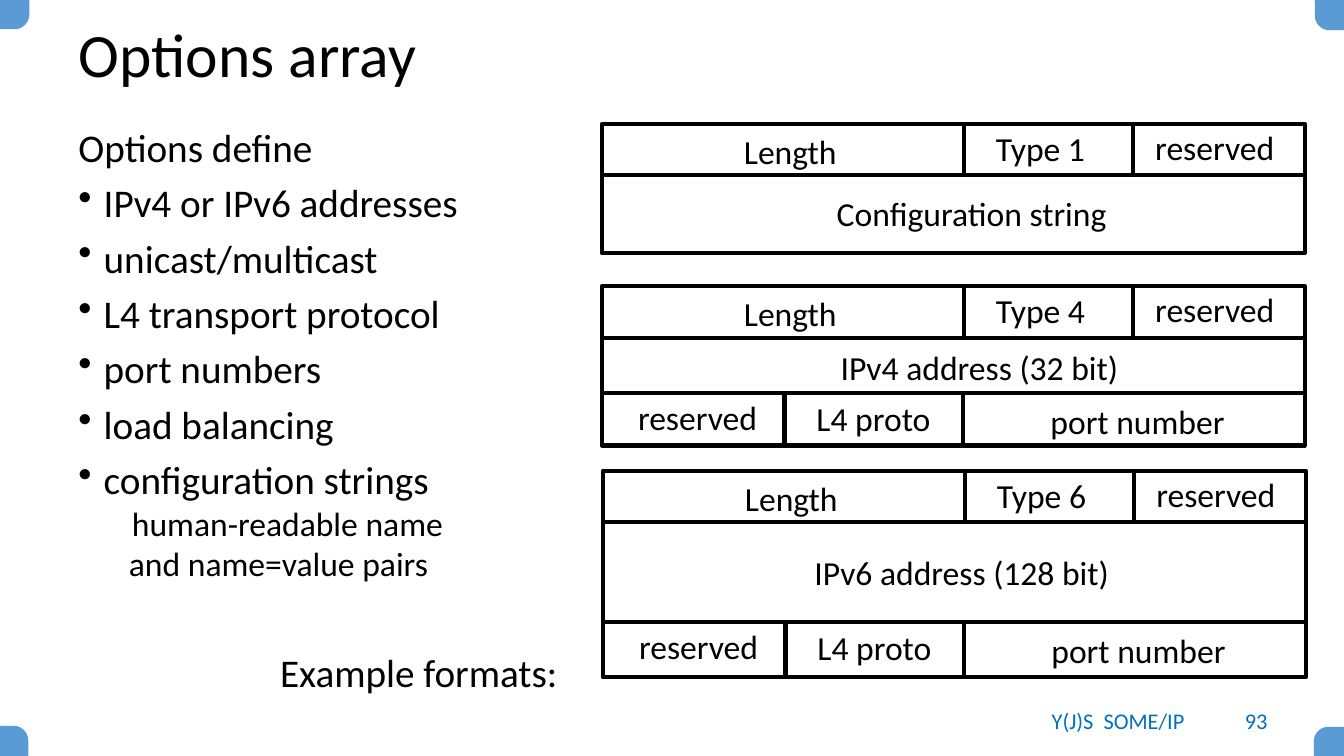
"""Build the slide on the options array and its three example formats."""
from dataclasses import dataclass

import lxml.etree
import pptx
import pptx.dml.color
import pptx.enum.shapes
import pptx.enum.text
import pptx.oxml.ns
import pptx.util

PX = 9144
FONT = "Calibri"
COLORS = {"text": "000000", "corner": "5B9BD5", "footer": "0070C0"}
ALIGN = pptx.enum.text.PP_ALIGN
ANCHOR = pptx.enum.text.MSO_ANCHOR
SHAPE = pptx.enum.shapes.MSO_SHAPE

FORMAT_WIDTH = 697
HEADER_HEIGHT = 51
HEADER_DIVIDERS = (359, 527)
PORT_DIVIDERS = (181, 358)
LABEL_HEIGHT = 50


@dataclass(frozen=True)
class Label:
    text: str
    left: int
    top: int
    width: int


@dataclass(frozen=True)
class OptionFormat:
    left: int
    top: int
    height: int
    type_name: str
    content: Label
    port_row: int | None = None


@dataclass(frozen=True)
class Line:
    text: str
    size: int = 28
    before: int = 6
    indent: int = 0
    bullet: bool = False


@dataclass(frozen=True)
class Corner:
    left: int
    top: int
    rotation: int


CORNERS = (
    Corner(-1, -1, 90),
    Corner(1304, -1, 180),
    Corner(1304, 720, 270),
    Corner(-1, 720, 0),
)
TOPICS = (
    "IPv4 or IPv6 addresses",
    "unicast/multicast",
    "L4 transport protocol",
    "port numbers",
    "load balancing",
    "configuration strings",
)
BODY = (
    Line("Options define"),
    *(Line(topic, indent=25, bullet=True) for topic in TOPICS),
    Line("human-readable name", size=24, before=0, indent=53),
    Line("and name=value pairs", size=24, before=0, indent=50),
    Line("Example formats:", before=46, indent=200),
)
FORMATS = (
    OptionFormat(597, 123, 128, "Type 1", Label("Configuration string", 223, 63, 329)),
    OptionFormat(597, 284, 158, "Type 4", Label("IPv4 address (32 bit)", 227, 55, 324), 106),
    OptionFormat(598, 467, 205, "Type 6", Label("IPv6 address (128 bit)", 200, 76, 314), 150),
)


def px(*lengths: int) -> list[int]:
    """Turn pixel lengths into EMU."""
    return [length * PX for length in lengths]


def rgb(name: str) -> pptx.dml.color.RGBColor:
    """Look up a named colour."""
    return pptx.dml.color.RGBColor.from_string(COLORS[name])


def format_runs(paragraph, size: int, color: str = "text") -> None:
    """Apply font, size and colour to every run of a paragraph."""
    for run in paragraph.runs:
        run.font.name = FONT
        run.font.size = pptx.util.Pt(size)
        run.font.color.rgb = rgb(color)


def add_text(shapes, label: Label, height: int, size: int, color: str = "text"):
    """Add a one-line text box and return its frame."""
    frame = shapes.add_textbox(*px(label.left, label.top, label.width, height)).text_frame
    frame.word_wrap = True
    frame.text = label.text
    format_runs(frame.paragraphs[0], size, color)
    return frame


def add_rule(shapes, x1: int, y1: int, x2: int, y2: int) -> None:
    """Draw one straight black rule."""
    straight = pptx.enum.shapes.MSO_CONNECTOR.STRAIGHT
    rule = shapes.add_connector(straight, *px(x1, y1, x2, y2))
    rule.line.color.rgb = rgb("text")
    rule.line.width = pptx.util.Pt(3)
    lxml.etree.SubElement(rule._element.spPr, pptx.oxml.ns.qn("a:effectLst"))


def add_format(slide, option: OptionFormat) -> None:
    """Draw one option format as a group of frame, rules and labels."""
    shapes = slide.shapes.add_group_shape().shapes
    left, top = option.left, option.top
    frame = shapes.add_shape(SHAPE.RECTANGLE, *px(left, top, FORMAT_WIDTH, option.height))
    frame.shadow.inherit = False
    frame.fill.background()
    frame.line.color.rgb = rgb("text")
    frame.line.width = pptx.util.Pt(3)

    labels = [
        Label("Length", 131, 2, 141),
        Label(option.type_name, 381, -1, 114),
        Label("reserved", 539, -2, 147),
        option.content,
    ]
    rows = [(HEADER_HEIGHT, 0, HEADER_HEIGHT, HEADER_DIVIDERS)]
    if option.port_row is not None:
        row = option.port_row
        rows.append((row, row, option.height, PORT_DIVIDERS))
        labels += [
            Label("reserved", 26, row - 1, 144),
            Label("L4 proto", 203, row, 144),
            Label("port number", 435, row + 3, 223),
        ]
    for rule, start, end, dividers in rows:
        add_rule(shapes, left, top + rule, left + FORMAT_WIDTH, top + rule)
        for divider in dividers:
            add_rule(shapes, left + divider, top + start, left + divider, top + end)
    for label in labels:
        placed = Label(label.text, left + label.left, top + label.top, label.width)
        text = add_text(shapes, placed, LABEL_HEIGHT, 24)
        text.auto_size = pptx.enum.text.MSO_AUTO_SIZE.SHAPE_TO_FIT_TEXT


def add_corner(slide, corner: Corner) -> None:
    """Draw one corner ornament."""
    ornament = slide.shapes.add_shape(
        SHAPE.ROUND_1_RECTANGLE, *px(corner.left, corner.top, 29, 31)
    )
    ornament.adjustments[0] = 0.5
    ornament.rotation = corner.rotation
    ornament.shadow.inherit = False
    ornament.fill.solid()
    ornament.fill.fore_color.rgb = rgb("corner")
    ornament.line.fill.background()


def add_title(slide) -> None:
    """Place and format the title."""
    title = slide.shapes.title
    title.left, title.top, title.width, title.height = px(68, 21, 1198, 72)
    title.text_frame.text = "Options array"
    title.text_frame.vertical_anchor = ANCHOR.MIDDLE
    heading = title.text_frame.paragraphs[0]
    heading.alignment = ALIGN.LEFT
    heading.line_spacing = 0.9
    format_runs(heading, 44)


def add_body(slide) -> None:
    """Write the list of what options define."""
    frame = slide.shapes.add_textbox(*px(68, 117, 1198, 566)).text_frame
    frame.word_wrap = True
    frame.text = "\n".join(line.text for line in BODY)
    for paragraph, line in zip(frame.paragraphs, BODY):
        paragraph.space_before = pptx.util.Pt(line.before)
        format_runs(paragraph, line.size)
        properties = paragraph._p.get_or_add_pPr()
        properties.set("marL", str(line.indent * PX))
        if line.bullet:
            properties.set("indent", str(-line.indent * PX))
            bullet = lxml.etree.SubElement(properties, pptx.oxml.ns.qn("a:buChar"))
            bullet.set("char", "•")


def main() -> None:
    """Build and save the slide."""
    deck = pptx.Presentation()
    deck.slide_width, deck.slide_height = px(1333, 750)
    slide = deck.slides.add_slide(deck.slide_layouts.get_by_name("Title Only"))
    for corner in CORNERS:
        add_corner(slide, corner)
    add_title(slide)
    for label, alignment in (
        (Label("Y(J)S  SOME/IP", 1010, 695, 198), ALIGN.CENTER),
        (Label("93", 1199, 695, 68), ALIGN.RIGHT),
    ):
        footer = add_text(slide.shapes, label, 40, 16, "footer")
        footer.vertical_anchor = ANCHOR.MIDDLE
        footer.paragraphs[0].alignment = alignment
    add_body(slide)
    for option in FORMATS:
        add_format(slide, option)
    deck.save("out.pptx")


if __name__ == "__main__":
    main()
